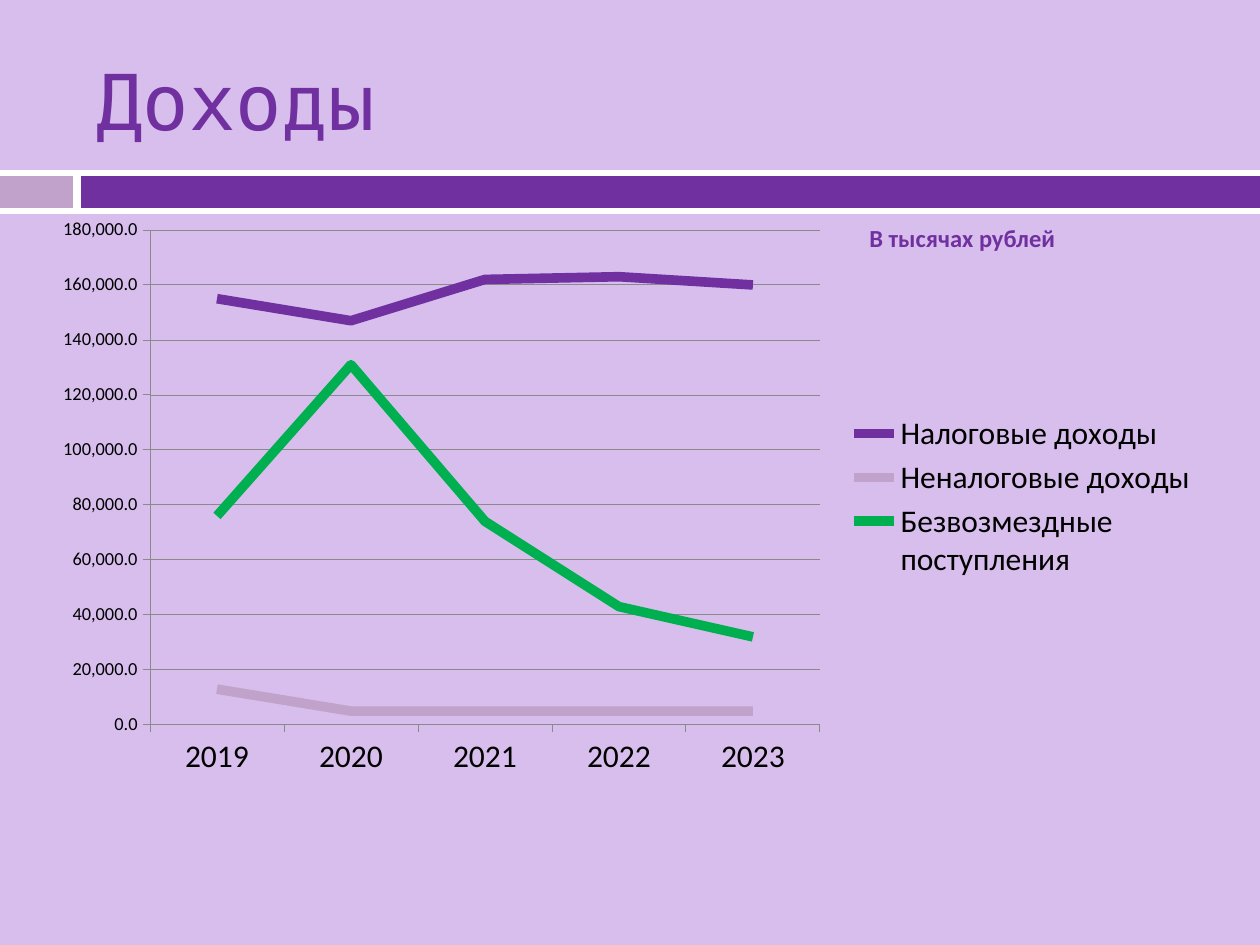
from lxml import etree
from pptx import Presentation
from pptx import util as u
from pptx.chart.data import CategoryChartData
from pptx.dml.color import RGBColor
from pptx.enum import chart as ch, shapes, text
from pptx.oxml.ns import qn

COLORS = {
    "background": "D8BEEC", "white": "FFFFFF", "lilac": "C0A2CA",
    "purple": "7030A0", "green": "00B050", "black": "000000", "grid": "8A8A8A",
}
BANDS = [
    ((0, 170, 1260, 44), "white"),
    ((0, 176, 73, 32), "lilac"),
    ((81, 176, 1179, 32), "purple"),
]
LABELS = [
    ("Доходы", (84, 32, 1124, 136), 44, "DejaVu Sans Mono", False, text.MSO_ANCHOR.MIDDLE),
    ("В тысячах рублей", (857, 217, 286, 59), 14, "Calibri", True, text.MSO_ANCHOR.TOP),
]
YEARS = ["2019", "2020", "2021", "2022", "2023"]
SERIES = [
    ("Налоговые доходы", [155000, 147000, 162000, 163000, 160000], "purple"),
    ("Неналоговые доходы", [13000, 5000, 5000, 5000, 5000], "lilac"),
    ("Безвозмездные поступления", [76000, 131000, 74000, 43000, 32000], "green"),
]
CHART = (39, 207, 1172, 581)
PLOT = (150, 230, 670, 495)
LEGEND = (847, 409, 350, 175)
SCALE = 914400 // 126


def px(box):
    return [u.Emu(n * SCALE) for n in box]


def rgb(name):
    return RGBColor.from_string(COLORS[name])


def place(parent, index, box, inner=False):
    for old in parent.findall(qn("c:layout")):
        parent.remove(old)
    layout = etree.Element(qn("c:layout"))
    manual = etree.SubElement(layout, qn("c:manualLayout"))
    x, y, w, h = box
    left, top, width, height = CHART
    values = [("xMode", "edge"), ("yMode", "edge"),
              ("x", (x - left) / width), ("y", (y - top) / height),
              ("w", w / width), ("h", h / height)]
    if inner:
        values.insert(0, ("layoutTarget", "inner"))
    for tag, value in values:
        etree.SubElement(manual, qn("c:" + tag)).set("val", str(value))
    parent.insert(index, layout)


def add_band(s, box, color):
    sp = s.shapes.add_shape(shapes.MSO_SHAPE.RECTANGLE, *px(box))
    sp.shadow.inherit = False
    sp.fill.solid()
    sp.fill.fore_color.rgb = rgb(color)
    sp.line.fill.background()


def add_label(s, words, box, size, font, bold, anchor):
    tf = s.shapes.add_textbox(*px(box)).text_frame
    tf.word_wrap = True
    tf.vertical_anchor = anchor
    p = tf.paragraphs[0]
    p.text = words
    p.font.size = u.Pt(size)
    p.font.name = font
    p.font.bold = bold
    p.font.color.rgb = rgb("purple")


def add_income_chart(s):
    data = CategoryChartData(number_format="#,##0.0")
    data.categories = YEARS
    for name, values, _ in SERIES:
        data.add_series(name, values)
    chart = s.shapes.add_chart(ch.XL_CHART_TYPE.LINE, *px(CHART), data).chart
    chart.has_title = False
    chart.font.size = u.Pt(18)
    chart.font.name = "Calibri"
    chart.font.color.rgb = rgb("black")
    chart.plots[0].vary_by_categories = False
    for series, (_, _, color) in zip(chart.plots[0].series, SERIES):
        series.smooth = False
        series.marker.style = ch.XL_MARKER_STYLE.NONE
        series.format.line.width = u.Pt(5.5)
        series.format.line.color.rgb = rgb(color)

    axis = chart.value_axis
    axis.minimum_scale, axis.maximum_scale, axis.major_unit = 0, 180000, 20000
    axis.has_major_gridlines = True
    axis.tick_labels.font.size = u.Pt(10.5)
    axis.tick_labels.number_format = "#,##0.0"
    axis.tick_labels.number_format_is_linked = False
    for part in (axis, chart.category_axis, axis.major_gridlines):
        part.format.line.color.rgb = rgb("grid")
        part.format.line.width = u.Pt(0.5)
    for part in (axis, chart.category_axis):
        part.major_tick_mark = ch.XL_TICK_MARK.OUTSIDE

    chart.has_legend = True
    legend = chart.legend
    legend.position = ch.XL_LEGEND_POSITION.RIGHT
    legend.include_in_layout = False
    legend.font.size = u.Pt(18)
    root = chart.element
    place(root.find(".//" + qn("c:plotArea")), 0, PLOT, inner=True)
    place(root.find(".//" + qn("c:legend")), 1, LEGEND)


def main():
    prs = Presentation()
    prs.slide_width, prs.slide_height = px((1260, 945))
    s = prs.slides.add_slide(prs.slide_layouts[6])
    s.background.fill.solid()
    s.background.fill.fore_color.rgb = rgb("background")
    for box, color in BANDS:
        add_band(s, box, color)
    add_income_chart(s)
    for label in LABELS:
        add_label(s, *label)
    prs.save("out.pptx")


if __name__ == "__main__":
    main()
